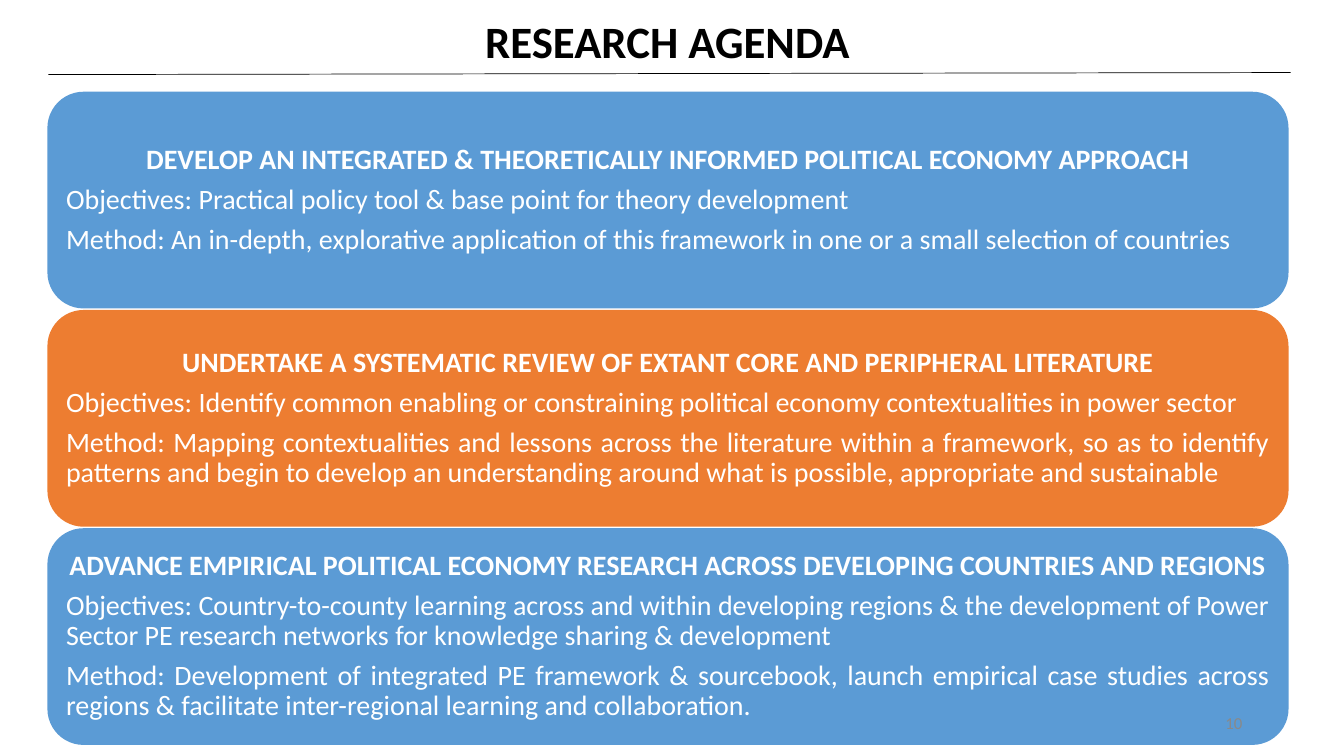
from lxml.etree import SubElement
from pptx import Presentation
from pptx.dml.color import RGBColor
from pptx.enum.shapes import MSO_CONNECTOR, MSO_SHAPE
from pptx.enum.text import MSO_ANCHOR, PP_ALIGN
from pptx.oxml.ns import qn
from pptx.util import Inches, Pt

COLORS = {
    "blue": "5B9BD5",
    "orange": "ED7D31",
    "white": "FFFFFF",
    "black": "000000",
    "gray": "898989",
}

TITLE = {"size": Pt(32), "bold": True, "color": "black"}
HEADING = {"size": Pt(20), "bold": True, "color": "white"}
BODY = {"size": Pt(20), "bold": False, "color": "white"}
PAGE_NUMBER = {"size": Pt(12), "bold": False, "color": "gray"}

CARD_LEFT, CARD_TOP = 0.47, 0.91
CARD_WIDTH, CARD_HEIGHT = 12.31, 2.15
CARD_PITCH = 2.165

AGENDA = [
    (
        "blue",
        "DEVELOP AN INTEGRATED & THEORETICALLY INFORMED POLITICAL ECONOMY APPROACH",
        "Objectives: Practical policy tool & base point for theory development",
        "Method: An in-depth, explorative application of this framework in one or "
        "a small selection of countries",
    ),
    (
        "orange",
        "UNDERTAKE A SYSTEMATIC REVIEW OF EXTANT CORE AND PERIPHERAL LITERATURE",
        "Objectives: Identify common enabling or constraining political economy "
        "contextualities in power sector",
        "Method: Mapping contextualities and lessons across the literature within "
        "a framework, so as to identify patterns and begin to develop an "
        "understanding around what is possible, appropriate and sustainable",
    ),
    (
        "blue",
        "ADVANCE EMPIRICAL POLITICAL ECONOMY RESEARCH ACROSS DEVELOPING COUNTRIES AND REGIONS",
        "Objectives: Country-to-county learning across and within developing regions "
        "& the development of Power Sector PE research networks for knowledge "
        "sharing & development",
        "Method: Development of integrated PE framework & sourcebook, launch "
        "empirical case studies across regions & facilitate inter-regional "
        "learning and collaboration.",
    ),
]


def rgb(name):
    return RGBColor.from_string(COLORS[name])


def apply_format(target, values):
    for name, value in values.items():
        setattr(target, name, value)


def write_paragraph(paragraph, text, style, layout):
    apply_format(paragraph, layout)
    run = paragraph.add_run()
    run.text = text
    font_values = {"name": "Calibri", "size": style["size"], "bold": style["bold"]}
    apply_format(run.font, font_values)
    run.font.color.rgb = rgb(style["color"])


def add_label(slide, position, text, style, layout):
    shape = slide.shapes.add_textbox(*map(Inches, position))
    shape.text_frame.word_wrap = True
    write_paragraph(shape.text_frame.paragraphs[0], text, style, layout)


def add_card(slide, top, color, heading, *details):
    shape = slide.shapes.add_shape(
        MSO_SHAPE.ROUNDED_RECTANGLE,
        *map(Inches, (CARD_LEFT, top, CARD_WIDTH, CARD_HEIGHT)),
    )
    shape.shadow.inherit = False
    shape.fill.solid()
    shape.fill.fore_color.rgb = rgb(color)
    shape.line.fill.background()
    frame = shape.text_frame
    margins = ("margin_left", "margin_top", "margin_right", "margin_bottom")
    apply_format(frame, dict.fromkeys(margins, Inches(0.08)))
    apply_format(frame, {"word_wrap": True, "vertical_anchor": MSO_ANCHOR.MIDDLE})
    spacing = {"line_spacing": 0.9, "space_after": Pt(7)}
    write_paragraph(
        frame.paragraphs[0], heading, HEADING, {"alignment": PP_ALIGN.CENTER, **spacing}
    )
    for detail in details:
        write_paragraph(
            frame.add_paragraph(), detail, BODY, {"alignment": PP_ALIGN.JUSTIFY, **spacing}
        )


def add_rule(slide, start, end):
    connector = slide.shapes.add_connector(
        MSO_CONNECTOR.STRAIGHT, *map(Inches, start + end)
    )
    connector.line.color.rgb = rgb("black")
    connector.line.width = Pt(0.5)
    SubElement(connector.element.spPr, qn("a:effectLst"))


def main():
    presentation = Presentation()
    presentation.slide_width = Inches(13.33)
    presentation.slide_height = Inches(7.5)
    slide = presentation.slides.add_slide(presentation.slide_layouts[6])

    add_label(
        slide,
        (0.46, 0.09, 12.32, 0.64),
        "RESEARCH AGENDA",
        TITLE,
        {"alignment": PP_ALIGN.CENTER, "space_after": Pt(6)},
    )
    for index, card in enumerate(AGENDA):
        add_card(slide, CARD_TOP + index * CARD_PITCH, *card)
    add_rule(slide, (0.48, 0.74), (12.8, 0.72))
    add_label(
        slide, (11.42, 7.02, 1, 0.3), "10", PAGE_NUMBER, {"alignment": PP_ALIGN.RIGHT}
    )
    presentation.save("out.pptx")


if __name__ == "__main__":
    main()
